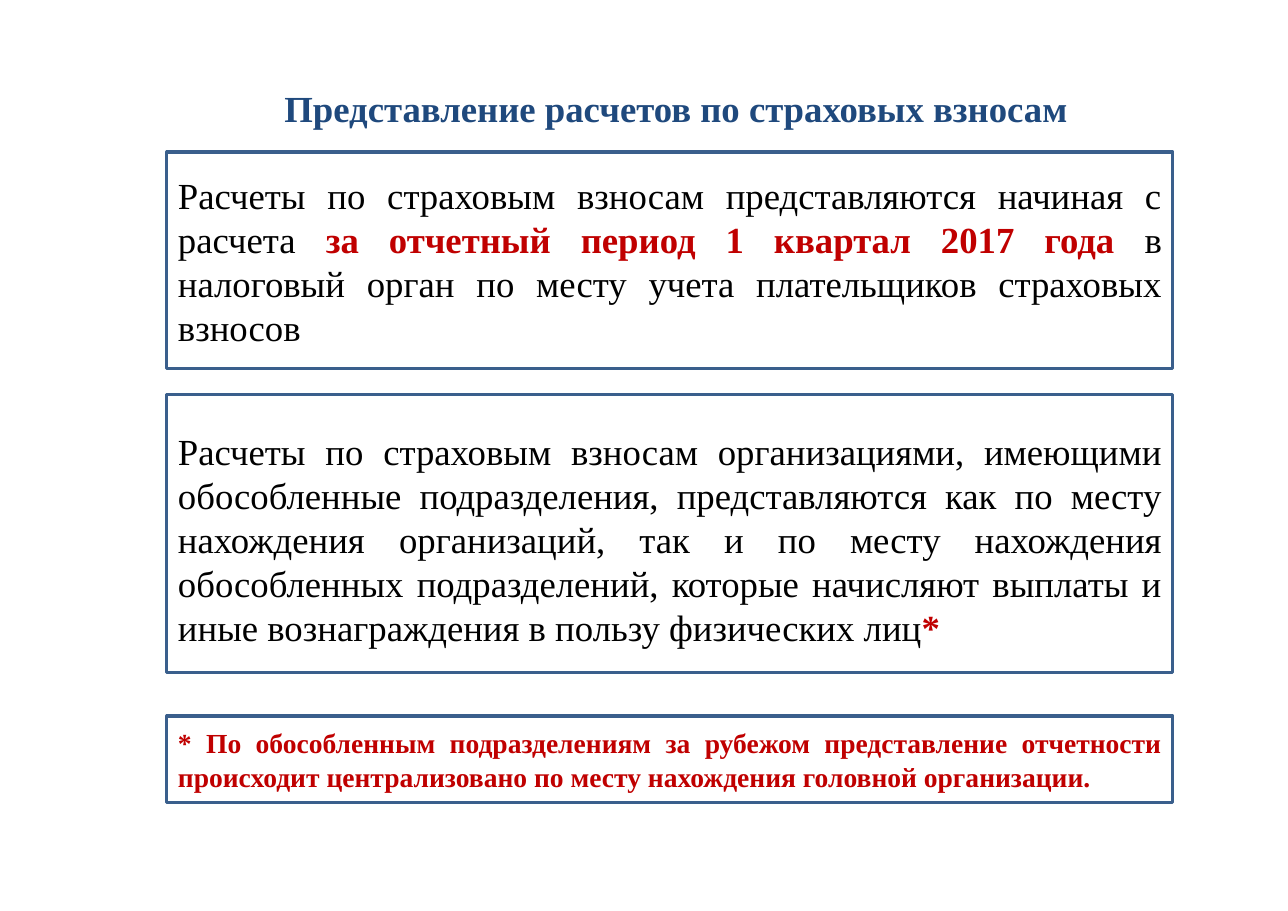
from dataclasses import dataclass

from pptx import Presentation
from pptx.dml.color import RGBColor
from pptx.enum import shapes, text
from pptx import util as u

PX = 8298  # EMU in one px
FONT = "Times New Roman"
NAVY, BORDER, RED, BLACK = "1F497D", "3A5F8C", "C00000", "000000"
BOX_LEFT, BOX_WIDTH = 167, 1006


@dataclass
class Run:
    wording: str
    color: str = BLACK
    bold: bool = False


@dataclass
class Box:
    top: int
    height: int
    size: int
    runs: list[Run]
    inset_top: int = 6


TITLE = Run("Представление расчетов по страховых взносам", NAVY, True)
BOXES = [
    Box(152, 217, 24, [
        Run("Расчеты по страховым взносам представляются начиная с расчета "),
        Run("за отчетный период 1 квартал 2017 года ", RED, True),
        Run("в налоговый орган по месту учета плательщиков страховых взносов"),
    ]),
    Box(395, 278, 24, [
        Run("Расчеты по страховым взносам организациями, имеющими обособленные "
            "подразделения, представляются как по месту нахождения организаций, "
            "так и по месту нахождения обособленных подразделений, которые "
            "начисляют выплаты и иные вознаграждения в пользу физических лиц"),
        Run("*", RED, True),
    ], inset_top=16),
    Box(716, 87, 18, [
        Run("* По обособленным подразделениям за рубежом представление отчетности "
            "происходит централизовано по месту нахождения головной организации.",
            RED, True),
    ]),
]


def px(length: int) -> u.Emu:
    return u.Emu(length * PX)


def rgb(color: str) -> RGBColor:
    return RGBColor.from_string(color)


def set_all(target, values: dict) -> None:
    for name, value in values.items():
        setattr(target, name, value)


def write(frame, runs: list[Run], size: int, align, insets: tuple[int, int, int]):
    """Fill a text frame; insets are side, top and bottom in px."""
    side, top, bottom = insets
    set_all(frame, {
        "word_wrap": True,
        "auto_size": text.MSO_AUTO_SIZE.NONE,
        "vertical_anchor": text.MSO_ANCHOR.MIDDLE,
        "margin_left": px(side), "margin_right": px(side),
        "margin_top": px(top), "margin_bottom": px(bottom),
    })
    paragraph = frame.paragraphs[0]
    paragraph.alignment = align
    for item in runs:
        run = paragraph.add_run()
        run.text = item.wording
        set_all(run.font, {"name": FONT, "size": u.Pt(size), "bold": item.bold})
        run.font.color.rgb = rgb(item.color)
    return paragraph


def add_title(slide) -> None:
    title = slide.shapes.title
    set_all(title, {"left": px(202), "top": px(56),
                    "width": px(948), "height": px(69)})
    paragraph = write(title.text_frame, [TITLE], 24, text.PP_ALIGN.CENTER, (12, 7, 7))
    paragraph.line_spacing = u.Pt(52)


def add_box(slide, box: Box) -> None:
    shape = slide.shapes.add_shape(
        shapes.MSO_SHAPE.RECTANGLE,
        px(BOX_LEFT), px(box.top), px(BOX_WIDTH), px(box.height))
    shape.shadow.inherit = False
    shape.fill.background()
    shape.line.color.rgb = rgb(BORDER)
    shape.line.width = u.Pt(2)
    write(shape.text_frame, box.runs, box.size, text.PP_ALIGN.JUSTIFY,
          (11, box.inset_top, 6))


def main() -> None:
    presentation = Presentation()
    set_all(presentation, {"slide_width": px(1288), "slide_height": px(911)})

    # Title Only layout
    slide = presentation.slides.add_slide(presentation.slide_layouts[5])
    add_title(slide)

    # Framed statements
    for box in BOXES:
        add_box(slide, box)

    presentation.save("out.pptx")


if __name__ == "__main__":
    main()
